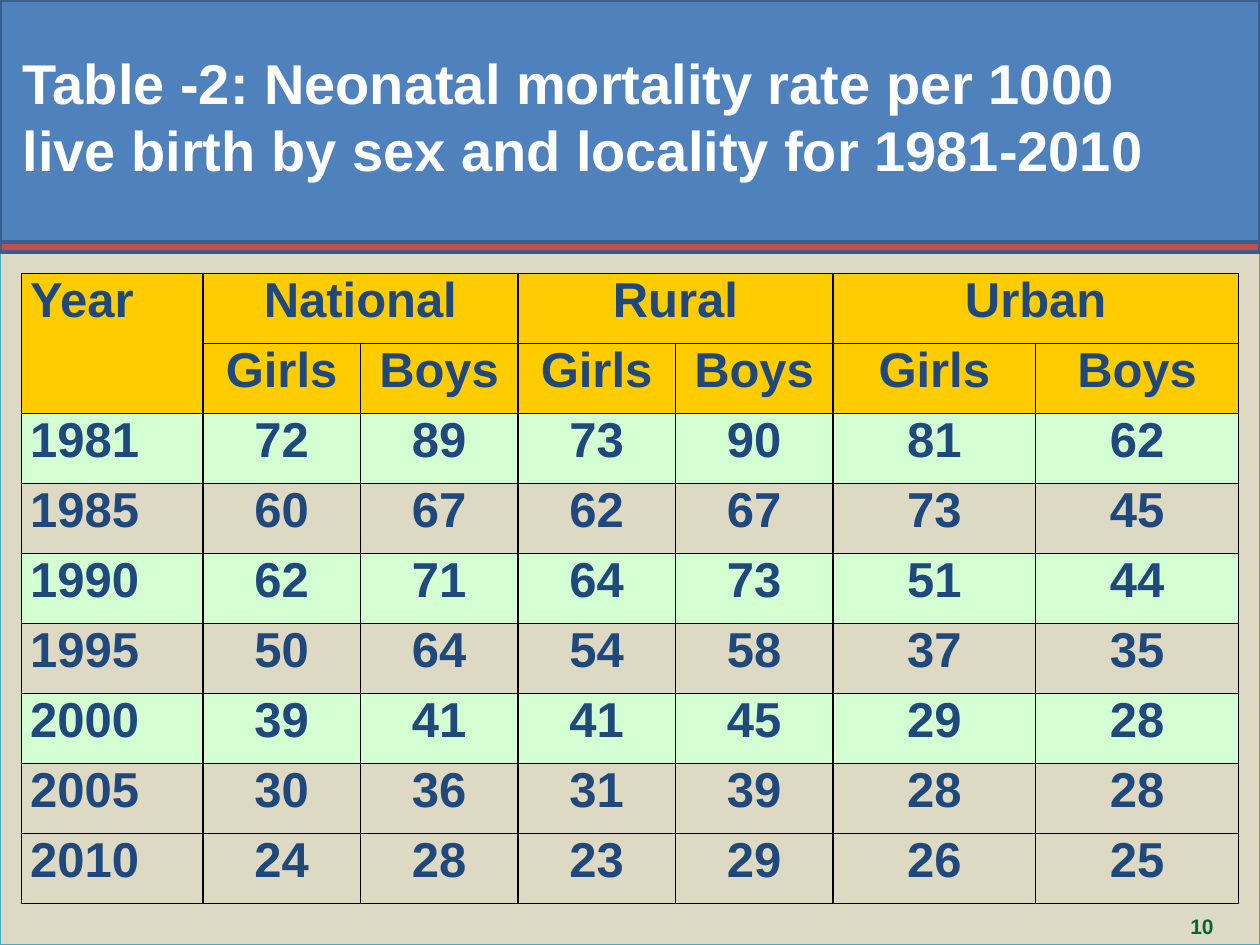
import pptx
import pptx.dml.color
import pptx.enum.shapes
import pptx.enum.text
import pptx.oxml
import pptx.oxml.ns
import pptx.util
from pptx.util import Inches

Align = pptx.enum.text.PP_ALIGN
Anchor = pptx.enum.text.MSO_ANCHOR


def color(code):
    return pptx.dml.color.RGBColor.from_string(code)


def style(frame, size, code, align):
    """Format the first paragraph of a text frame."""
    para = frame.paragraphs[0]
    para.alignment = align
    for run in para.runs:
        run.font.name = "Arial"
        run.font.size = pptx.util.Pt(size)
        run.font.bold = True
        run.font.color.rgb = color(code)


deck = pptx.Presentation()
deck.slide_width, deck.slide_height = Inches(10), Inches(7.5)
slide = deck.slides.add_slide(deck.slide_layouts[5])
shapes = slide.shapes

# Body panel, title band and red stripe: top, height, fill, line, line width
bands = [
    (2, 5.5, "DDD9C3", "46AAC5", 0.75),
    (0, 1.92, "4F81BD", "3A5F8C", 2),
    (1.92, 0.08, "C0504D", "3A5F8C", 2),
]
for top, height, fill, line, width in bands:
    band = shapes.add_shape(pptx.enum.shapes.MSO_SHAPE.RECTANGLE,
                            0, Inches(top), Inches(10), Inches(height))
    band.shadow.inherit = False
    band.fill.solid()
    band.fill.fore_color.rgb = color(fill)
    band.line.color.rgb = color(line)
    band.line.width = pptx.util.Pt(width)

# The title placeholder comes first in the layout, so lift it above the bands
title = shapes.title
band.element.addnext(title.element)
title.left, title.top = Inches(0.08), Inches(0)
title.width, title.height = Inches(9.58), Inches(1.83)
frame = title.text_frame
frame.text = ("Table -2: Neonatal mortality rate per 1000 "
              "live birth by sex and locality for 1981-2010")
frame.word_wrap = True
frame.auto_size = pptx.enum.text.MSO_AUTO_SIZE.NONE
frame.vertical_anchor = Anchor.MIDDLE
style(frame, 32, "FFFFFF", Align.LEFT)

rows = [
    ["Year", "National", "", "Rural", "", "Urban", ""],
    [""] + ["Girls", "Boys"] * 3,
    [1981, 72, 89, 73, 90, 81, 62],
    [1985, 60, 67, 62, 67, 73, 45],
    [1990, 62, 71, 64, 73, 51, 44],
    [1995, 50, 64, 54, 58, 37, 35],
    [2000, 39, 41, 41, 45, 29, 28],
    [2005, 30, 36, 31, 39, 28, 28],
    [2010, 24, 28, 23, 29, 26, 25],
]
fills = ["FFCC00", "FFCC00", "D3FFD3", None, "D3FFD3", None, "D3FFD3", None, None]
widths = [1.44] + [1.25] * 4 + [1.61] * 2

table = shapes.add_table(len(rows), len(widths), Inches(0.17), Inches(2.17),
                         Inches(9.67), Inches(5)).table
table.first_row = table.horz_banding = False
for col, width in zip(table.columns, widths):
    col.width = Inches(width)
for row in table.rows:
    row.height = Inches(5 / len(rows))

table.cell(0, 0).merge(table.cell(1, 0))
for left in (1, 3, 5):
    table.cell(0, left).merge(table.cell(0, left + 1))

space = pptx.oxml.ns.nsdecls("a")
for r, (row, fill) in enumerate(zip(rows, fills)):
    for c, value in enumerate(row):
        cell = table.cell(r, c)
        cell.margin_left = cell.margin_right = Inches(0.07)
        cell.margin_top = cell.margin_bottom = 0
        cell.vertical_anchor = Anchor.TOP
        props = cell._tc.get_or_add_tcPr()
        for side in ("lnL", "lnR", "lnT", "lnB"):
            props.append(pptx.oxml.parse_xml(
                f'<a:{side} {space} w="12700"><a:solidFill>'
                f'<a:srgbClr val="000000"/></a:solidFill></a:{side}>'))
        if fill:
            cell.fill.solid()
            cell.fill.fore_color.rgb = color(fill)
        else:
            cell.fill.background()
        if value != "":
            cell.text_frame.text = str(value)
            style(cell.text_frame, 28, "1F497D",
                  Align.CENTER if c else Align.JUSTIFY)

number = shapes.add_textbox(Inches(9.25), Inches(7.2), Inches(0.58), Inches(0.3))
number.text_frame.word_wrap = True
number.text_frame.text = "10"
style(number.text_frame, 12, "00682F", Align.CENTER)

deck.save("out.pptx")
